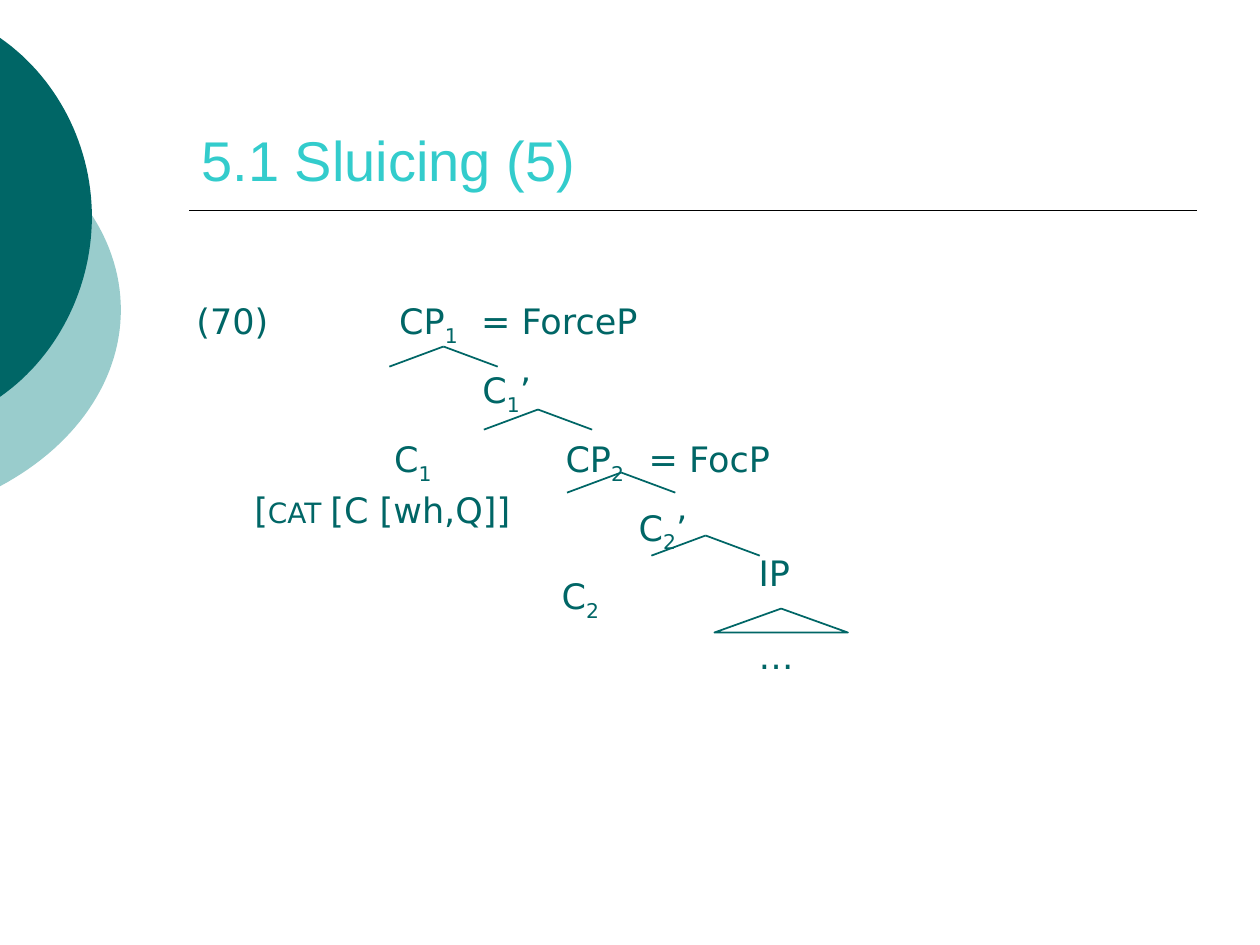
"""Build the slide "5.1 Sluicing (5)" with its syntax tree."""
from lxml import etree
from pptx import Presentation
from pptx.dml.color import RGBColor
from pptx.enum.shapes import MSO_CONNECTOR, MSO_SHAPE
from pptx.enum.text import MSO_ANCHOR, PP_ALIGN
from pptx.oxml.ns import qn
from pptx.util import Inches, Pt

STRAIGHT = MSO_CONNECTOR.STRAIGHT
TRIANGLE = MSO_SHAPE.ISOSCELES_TRIANGLE
BOTTOM, TOP, LEFT = MSO_ANCHOR.BOTTOM, MSO_ANCHOR.TOP, PP_ALIGN.LEFT
TEAL = RGBColor(0x00, 0x66, 0x66)
PALE_TEAL = RGBColor(0x99, 0xCC, 0xCC)
AQUA = RGBColor(0x33, 0xCC, 0xCC)
BLACK = RGBColor(0x00, 0x00, 0x00)


def bezier(p0, p1, p2, p3, steps=30):
    points = []
    for i in range(steps + 1):
        t = i / steps
        u = 1 - t
        points.append(tuple(
            u**3 * a + 3 * u * u * t * b + 3 * u * t * t * c + t**3 * d
            for a, b, c, d in zip(p0, p1, p2, p3)))
    return points


class TreeSlide:
    title_font, body_font = "Arial", "DejaVu Sans"
    title_size, body_size = Pt(32), Pt(20)
    line_width = Pt(1)

    def __init__(self, slide):
        self.slide = slide
        self.shapes = slide.shapes

    def format_run(self, r, font, size, color):
        r.font.name, r.font.size = font, size
        r.font.color.rgb = color

    def title(self, text, left, top, width, height):
        sp = self.shapes.title
        sp.left, sp.top = Inches(left), Inches(top)
        sp.width, sp.height = Inches(width), Inches(height)
        tf = sp.text_frame
        tf.text = text
        tf.vertical_anchor = BOTTOM
        p = tf.paragraphs[0]
        p.alignment = LEFT
        self.format_run(p.runs[0], self.title_font, self.title_size, AQUA)

    def disc_edge(self, top, middle, bottom, reach, shoulder, bulge, color):
        upper = bezier((0, top), (shoulder, top + bulge[0]),
                       (reach, middle - bulge[1]), (reach, middle))
        lower = bezier((reach, middle), (reach, middle + bulge[1]),
                       (shoulder, bottom - bulge[0]), (0, bottom))
        points = [(Inches(x), Inches(y)) for x, y in upper + lower[1:]]
        builder = self.shapes.build_freeform(*points[0])
        builder.add_line_segments(points[1:], close=True)
        sp = builder.convert_to_shape()
        sp.shadow.inherit = False
        sp.fill.solid()
        sp.fill.fore_color.rgb = color
        sp.line.fill.background()

    def line(self, x1, y1, x2, y2, color=TEAL):
        cxn = self.shapes.add_connector(
            STRAIGHT, Inches(x1), Inches(y1), Inches(x2), Inches(y2))
        cxn.line.color.rgb = color
        cxn.line.width = self.line_width
        etree.SubElement(cxn._element.spPr, qn("a:effectLst"))

    def branch(self, x, y, spread=0.43, drop=0.16):
        for side in (-spread, spread):
            self.line(x, y, x + side, y + drop)

    def triangle(self, left, top, width, height):
        sp = self.shapes.add_shape(
            TRIANGLE, Inches(left), Inches(top), Inches(width), Inches(height))
        sp.shadow.inherit = False
        sp.fill.background()
        sp.line.color.rgb = TEAL
        sp.line.width = self.line_width

    def text(self, left, top, width, height, inset=0.1):
        sp = self.shapes.add_textbox(
            Inches(left), Inches(top), Inches(width), Inches(height))
        tf = sp.text_frame
        tf.word_wrap = True
        tf.vertical_anchor = TOP
        tf.margin_left = Inches(inset)
        return tf

    def paragraph(self, p, pieces, space=0, tabs=()):
        p.space_before = Pt(space)
        if tabs:
            tab_list = etree.SubElement(p._p.get_or_add_pPr(), qn("a:tabLst"))
            for pos in tabs:
                etree.SubElement(tab_list, qn("a:tab"), pos=str(Inches(pos)), algn="l")
        for text, attributes in pieces:
            r = p.add_run()
            r.text = text
            self.format_run(r, self.body_font, self.body_size, TEAL)
            for name, value in attributes.items():
                r.font._element.set(name, value)


def main():
    prs = Presentation()
    prs.slide_width, prs.slide_height = Inches(10), Inches(7.5)
    s = TreeSlide(prs.slides.add_slide(prs.slide_layouts[5]))

    s.disc_edge(1.06, 2.46, 3.86, 0.96, 0.6, (0.32, 0.56), PALE_TEAL)
    s.disc_edge(0.3, 1.72, 3.15, 0.73, 0.46, (0.32, 0.56), TEAL)
    s.line(1.5, 1.67, 9.5, 1.67, BLACK)
    s.title("5.1 Sluicing (5)", 1.5, 0.33, 8.23, 1.25)

    plain, sub, small = {}, {"baseline": "-25000"}, {"cap": "small"}
    rows = [
        ((1.61, 2.26), [("(70)\tCP", plain), ("1", sub), ("\t= ForceP", plain)]),
        ((2.27,), [("\tC", plain), ("1", sub), ("’", plain)]),
        ((1.57, 2.93, 3.59), [("\tC", plain), ("1", sub), ("\tCP", plain),
                              ("2", sub), ("\t= FocP", plain)]),
        ((3.51,), [("\tC", plain), ("2", sub), ("’", plain)]),
        ((2.9,), [("\tC", plain), ("2", sub)]),
    ]
    tf = s.text(1.46, 2.33, 7.79, 2.96)
    for i, (tabs, pieces) in enumerate(rows):
        p = tf.add_paragraph() if i else tf.paragraphs[0]
        s.paragraph(p, pieces, 12 if i else 0, tabs)

    s.triangle(5.67, 4.83, 1.06, 0.19)
    for x, y in ((3.52, 2.75), (4.27, 3.25), (4.93, 3.75), (5.6, 4.25)):
        s.branch(x, y)

    tf = s.text(1.92, 3.83, 2.5, 0.44)
    s.paragraph(tf.paragraphs[0],
                [("[", plain), ("cat ", small), ("[C [wh,Q]]", plain)])
    tf = s.text(5.83, 4.33, 0.75, 1.11, inset=0.19)
    s.paragraph(tf.paragraphs[0], [("IP", plain)])
    s.paragraph(tf.add_paragraph(), [("…", plain)], 23.3)

    prs.save("out.pptx")


if __name__ == "__main__":
    main()
